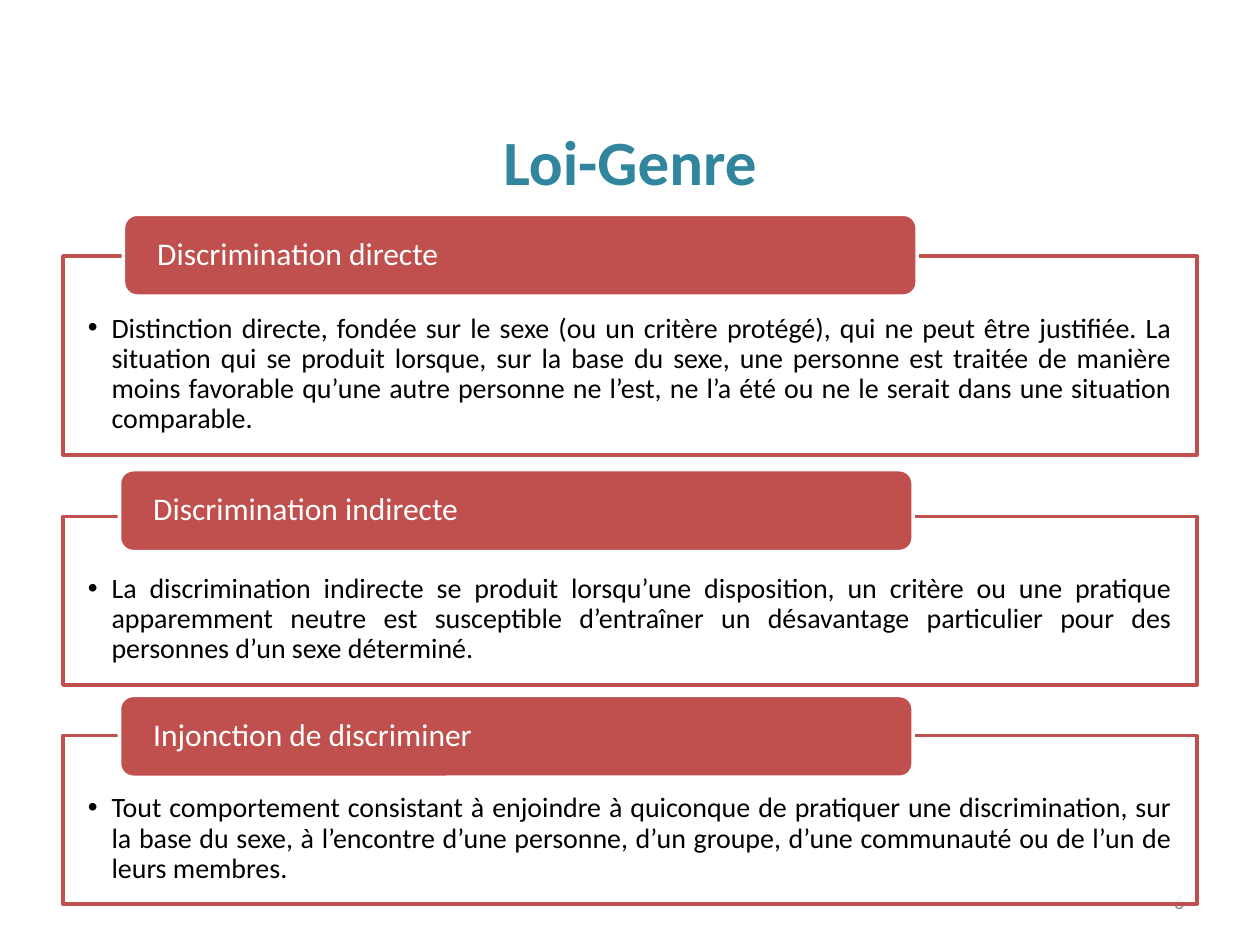
from dataclasses import dataclass

import lxml.etree
import pptx
import pptx.dml.color
import pptx.enum.shapes
import pptx.enum.text
import pptx.oxml.ns
import pptx.util

Cm = pptx.util.Cm
Pt = pptx.util.Pt
RGB = pptx.dml.color.RGBColor.from_string
ALIGN = pptx.enum.text.PP_ALIGN
ANCHOR = pptx.enum.text.MSO_ANCHOR
SHAPE = pptx.enum.shapes.MSO_SHAPE
qn = pptx.oxml.ns.qn


@dataclass(frozen=True)
class Theme:
    font: str = "Calibri"
    title_color: str = "31859C"
    accent: str = "C0504D"
    white: str = "FFFFFF"
    ink: str = "000000"
    muted: str = "8C8C8C"
    title_size: int = 36
    heading_size: int = 18
    body_size: int = 16
    number_size: int = 12
    line_width: int = 2


THEME = Theme()
MARGIN, CONTENT_WIDTH = 1.27, 22.86

# Heading, definition, frame top and height, heading offset from frame (cm)
DEFINITIONS = [
    ("Discrimination directe",
     "Distinction directe, fondée sur le sexe (ou un critère protégé), qui ne peut être "
     "justifiée. La situation qui se produit lorsque, sur la base du sexe, une personne est "
     "traitée de manière moins favorable qu’une autre personne ne l’est, ne l’a été ou ne le "
     "serait dans une situation comparable.",
     5.16, 4.01, (1.22, -0.84)),
    ("Discrimination indirecte",
     "La discrimination indirecte se produit lorsqu’une disposition, un critère ou une "
     "pratique apparemment neutre est susceptible d’entraîner un désavantage particulier "
     "pour des personnes d’un sexe déterminé.",
     10.41, 3.4, (1.14, -0.94)),
    ("Injonction de discriminer",
     "Tout comportement consistant à enjoindre à quiconque de pratiquer une discrimination, "
     "sur la base du sexe, à l’encontre d’une personne, d’un groupe, d’une communauté ou de "
     "l’un de leurs membres.",
     14.83, 3.4, (1.14, -0.81)),
]


def write(shape, text, size, color, align, anchor, bold=False, insets=None):
    """Fill a shape with one formatted paragraph and return it."""
    frame = shape.text_frame
    frame.word_wrap = True
    frame.vertical_anchor = anchor
    if insets:
        (frame.margin_left, frame.margin_top,
         frame.margin_right, frame.margin_bottom) = (Cm(inset) for inset in insets)
    frame.text = text
    paragraph = frame.paragraphs[0]
    paragraph.alignment = align
    font = paragraph.runs[0].font
    font.name, font.size, font.bold = THEME.font, Pt(size), bold
    font.color.rgb = RGB(color)
    return paragraph


def add_panel(slide, kind, box, fill, line):
    panel = slide.shapes.add_shape(kind, *(Cm(length) for length in box))
    panel.shadow.inherit = False
    panel.fill.solid()
    panel.fill.fore_color.rgb = RGB(fill)
    panel.line.color.rgb = RGB(line)
    panel.line.width = Pt(THEME.line_width)
    return panel


def set_opacity(shape, percent):
    color = shape.fill._xPr.find(qn("a:solidFill"))[0]
    lxml.etree.SubElement(color, qn("a:alpha"), val=str(percent * 1000))


def add_bullet(paragraph, indent):
    properties = paragraph._p.get_or_add_pPr()
    properties.set("marL", str(Cm(indent)))
    properties.set("indent", str(-Cm(indent)))
    lxml.etree.SubElement(properties, qn("a:buFont"), typeface="Arial")
    lxml.etree.SubElement(properties, qn("a:buChar"), char="•")


def place_title(slide, box, text):
    title = slide.shapes.title
    title.left, title.top, title.width, title.height = (Cm(length) for length in box)
    write(title, text, THEME.title_size, THEME.title_color, ALIGN.CENTER,
          ANCHOR.MIDDLE, bold=True)


def add_page_number(slide, box, text):
    number = slide.shapes.add_textbox(*(Cm(length) for length in box))
    write(number, text, THEME.number_size, THEME.muted, ALIGN.RIGHT, ANCHOR.MIDDLE)


def add_definition(slide, box, heading, definition, heading_offset):
    """Framed definition with its heading overlapping the top edge."""
    left, top, _, _ = box
    # Frame with bulleted text
    frame = add_panel(slide, SHAPE.RECTANGLE, box, THEME.white, THEME.accent)
    set_opacity(frame, 90)
    body = write(frame, definition, THEME.body_size, THEME.ink, ALIGN.JUSTIFY,
                 ANCHOR.TOP, insets=(0.5, 1.17, 0.5, 0.3))
    body.line_spacing = 0.9
    add_bullet(body, 0.48)

    # Heading
    shift_x, shift_y = heading_offset
    tab = add_panel(slide, SHAPE.ROUNDED_RECTANGLE,
                    (left + shift_x, top + shift_y, 16, 1.65), THEME.accent, THEME.white)
    label = write(tab, heading, THEME.heading_size, THEME.white, ALIGN.LEFT,
                  ANCHOR.MIDDLE, insets=(0.6, 0, 0.6, 0))
    label.line_spacing = 0.9


def main():
    deck = pptx.Presentation()
    deck.slide_width, deck.slide_height = Cm(25.4), Cm(19.05)
    slide = deck.slides.add_slide(deck.slide_layouts[5])

    place_title(slide, (MARGIN, 2.13, CONTENT_WIDTH, 2.21), "Loi-Genre")
    add_page_number(slide, (18.21, 17.65, 5.92, 1.02), "6")
    for heading, definition, top, height, offset in DEFINITIONS:
        add_definition(slide, (MARGIN, top, CONTENT_WIDTH, height),
                       heading, definition, offset)

    deck.save("out.pptx")


if __name__ == "__main__":
    main()
